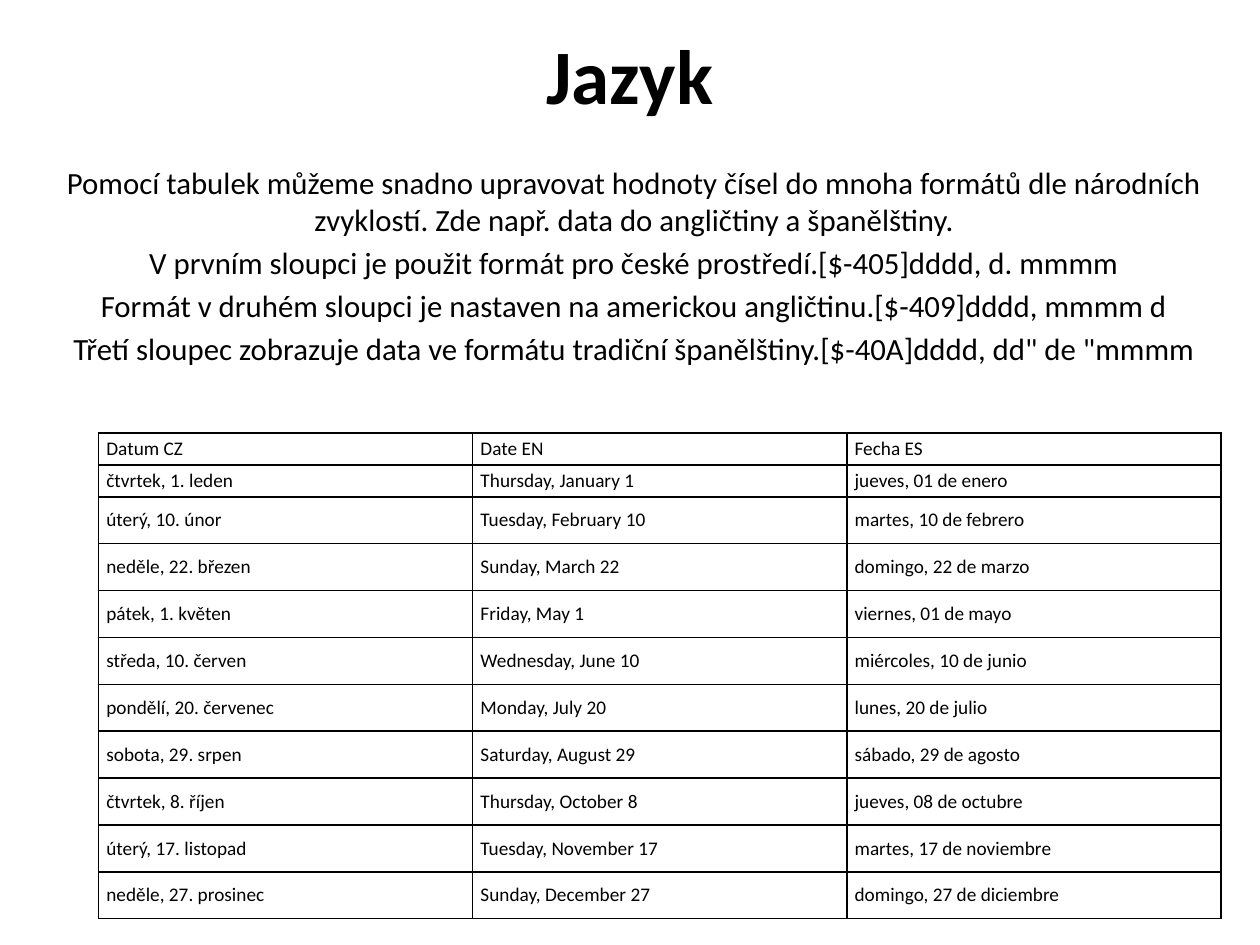
from lxml import etree
from pptx import Presentation
from pptx import util as u
from pptx.dml.color import RGBColor
from pptx.enum import text
from pptx.oxml.ns import qn

FONT = "Calibri"
BLACK = "000000"
TABLE_LEFT, TABLE_TOP = 56.3, 247.5
COLUMN_WIDTH = 213.8
SHORT_ROW, TALL_ROW = 18.2, 26.8
SHORT_ROWS = 2

INTRO = [
    "Pomocí tabulek můžeme snadno upravovat hodnoty čísel do mnoha formátů dle národních "
    "zvyklostí. Zde např. data do angličtiny a španělštiny.",
    "V prvním sloupci je použit formát pro české prostředí.[$-405]dddd, d. mmmm",
    "Formát v druhém sloupci je nastaven na americkou angličtinu.[$-409]dddd, mmmm d",
    'Třetí sloupec zobrazuje data ve formátu tradiční španělštiny.[$-40A]dddd, dd" de "mmmm',
]

DATES = [
    ("Datum CZ", "Date EN", "Fecha ES"),
    ("čtvrtek, 1. leden", "Thursday, January 1", "jueves, 01 de enero"),
    ("úterý, 10. únor", "Tuesday, February 10", "martes, 10 de febrero"),
    ("neděle, 22. březen", "Sunday, March 22", "domingo, 22 de marzo"),
    ("pátek, 1. květen", "Friday, May 1", "viernes, 01 de mayo"),
    ("středa, 10. červen", "Wednesday, June 10", "miércoles, 10 de junio"),
    ("pondělí, 20. červenec", "Monday, July 20", "lunes, 20 de julio"),
    ("sobota, 29. srpen", "Saturday, August 29", "sábado, 29 de agosto"),
    ("čtvrtek, 8. říjen", "Thursday, October 8", "jueves, 08 de octubre"),
    ("úterý, 17. listopad", "Tuesday, November 17", "martes, 17 de noviembre"),
    ("neděle, 27. prosinec", "Sunday, December 27", "domingo, 27 de diciembre"),
]


def set_color(color_format, value):
    color_format.rgb = RGBColor.from_string(value)


def format_runs(p, size, bold=False):
    for r in p.runs:
        r.font.name = FONT
        r.font.size = u.Pt(size)
        r.font.bold = bold
        set_color(r.font.color, BLACK)


def fill_placeholder(sp, box, lines, size, anchor, bold=False, space_before=0):
    sp.left, sp.top, sp.width, sp.height = [u.Pt(v) for v in box]
    tf = sp.text_frame
    tf.word_wrap = True
    tf.auto_size = text.MSO_AUTO_SIZE.NONE
    tf.vertical_anchor = anchor
    tf.text = "\n".join(lines)
    for p in tf.paragraphs:
        p.alignment = text.PP_ALIGN.CENTER
        p.space_before = u.Pt(space_before)
        format_runs(p, size, bold)


def add_borders(cell, width=1):
    """Draw all four cell edges; they must precede the fill in tcPr."""
    tc_pr = cell._tc.get_or_add_tcPr()
    for i, edge in enumerate(("lnL", "lnR", "lnT", "lnB")):
        ln = etree.Element(qn(f"a:{edge}"), w=str(u.Pt(width)))
        fill = etree.SubElement(ln, qn("a:solidFill"))
        etree.SubElement(fill, qn("a:srgbClr"), val=BLACK)
        tc_pr.insert(i, ln)


def format_cell(cell, value):
    cell.text = value
    cell.vertical_anchor = text.MSO_ANCHOR.MIDDLE
    cell.margin_left = cell.margin_right = u.Pt(4.5)
    cell.margin_top = cell.margin_bottom = u.Pt(2.2)
    cell.fill.background()
    format_runs(cell.text_frame.paragraphs[0], 11)
    add_borders(cell)


def add_date_table(s):
    heights = [SHORT_ROW if i < SHORT_ROWS else TALL_ROW for i in range(len(DATES))]
    columns = len(DATES[0])
    table = s.shapes.add_table(
        len(DATES), columns, u.Pt(TABLE_LEFT), u.Pt(TABLE_TOP),
        u.Pt(COLUMN_WIDTH * columns), u.Pt(sum(heights))).table
    table.first_row = table.horz_banding = False
    for column in table.columns:
        column.width = u.Pt(COLUMN_WIDTH)
    for row, height, values in zip(table.rows, heights, DATES):
        row.height = u.Pt(height)
        for cell, value in zip(row.cells, values):
            format_cell(cell, value)


def main():
    prs = Presentation()
    prs.slide_width, prs.slide_height = u.Pt(720), u.Pt(540)
    s = prs.slides.add_slide(prs.slide_layouts[0])
    fill_placeholder(s.shapes.title, (0, 0, 720, 84), ["Jazyk"], 44,
                     text.MSO_ANCHOR.MIDDLE, bold=True)
    fill_placeholder(s.placeholders[1], (16.5, 90, 692, 124), INTRO, 17.6,
                     text.MSO_ANCHOR.TOP, space_before=3.5)
    add_date_table(s)
    prs.save("out.pptx")


if __name__ == "__main__":
    main()
